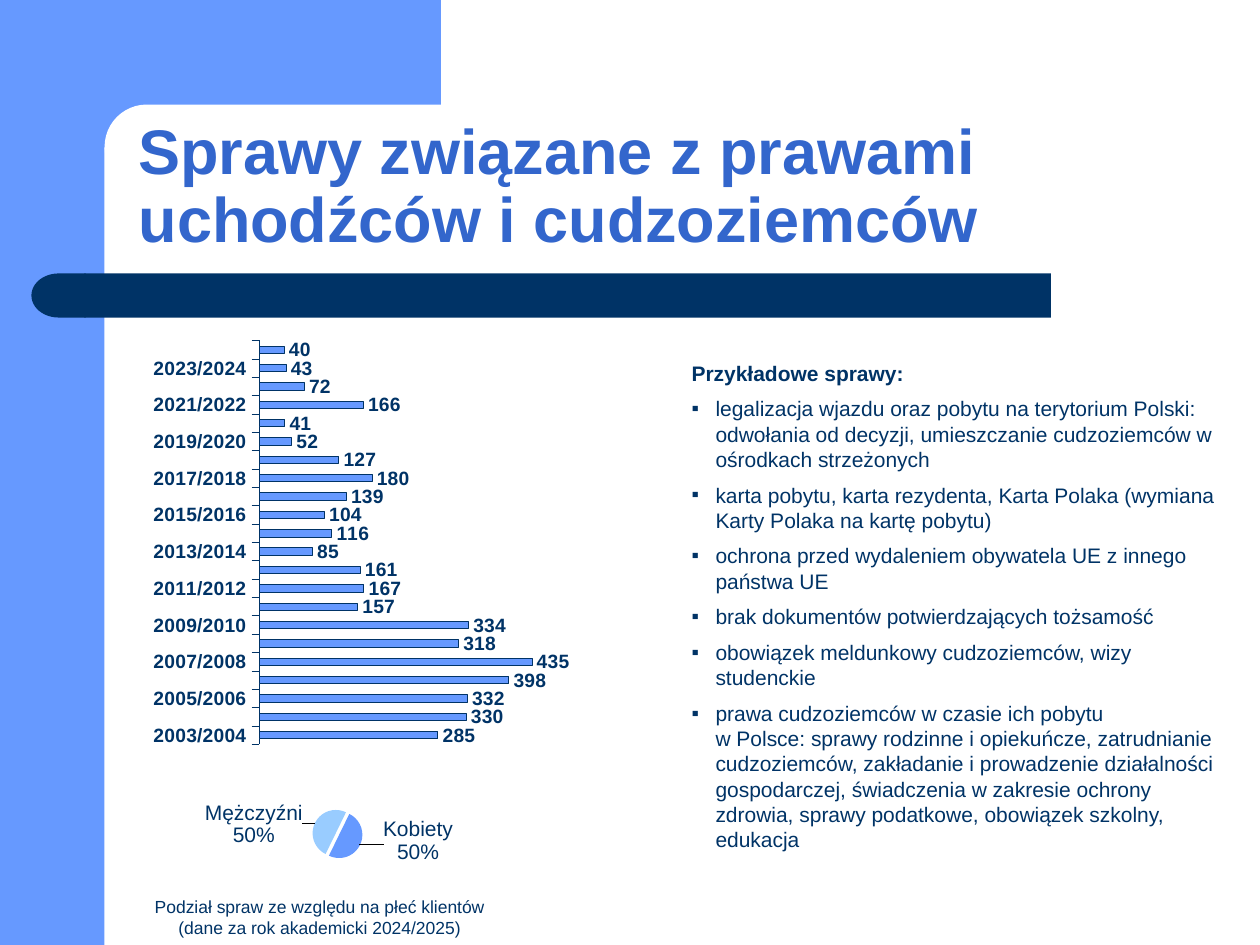
from lxml import etree
from pptx import Presentation, util as u
from pptx.chart.data import CategoryChartData
from pptx.dml.color import RGBColor
from pptx.enum import chart as charts, shapes, text
from pptx.oxml.ns import qn

CELL = u.Inches(0.1)
NAVY, BLUE, LIGHT, WHITE = "003366", "6699FF", "99CCFF", "FFFFFF"
YEAR_VALUES = [285, 330, 332, 398, 435, 318, 334, 157, 167, 161, 85,
               116, 104, 139, 180, 127, 52, 41, 166, 72, 43, 40]
YEARS = [f"{year}/{year + 1}" for year in range(2003, 2025)]
CASES = [
    "legalizacja wjazdu oraz pobytu na terytorium Polski: odwołania od decyzji, "
    "umieszczanie cudzoziemców w ośrodkach strzeżonych",
    "karta pobytu, karta rezydenta, Karta Polaka (wymiana Karty Polaka na kartę pobytu)",
    "ochrona przed wydaleniem obywatela UE z innego państwa UE",
    "brak dokumentów potwierdzających tożsamość",
    "obowiązek meldunkowy cudzoziemców, wizy studenckie",
    "prawa cudzoziemców w czasie ich pobytu \vw Polsce: sprawy rodzinne i opiekuńcze, "
    "zatrudnianie cudzoziemców, zakładanie i prowadzenie działalności gospodarczej, "
    "świadczenia w zakresie ochrony zdrowia, sprawy podatkowe, obowiązek szkolny, edukacja",
]


def color(value):
    return RGBColor.from_string(value)


def grid(*cells):
    return [int(cell * CELL) for cell in cells]


def apply(target, **values):
    for name, value in values.items():
        setattr(target, name, value)


def style(font, size, fill=NAVY, bold=False):
    apply(font, name="Arial", size=u.Pt(size), bold=bold)
    font.color.rgb = color(fill)


def add_block(slide, kind, cells, fill, adjustment=None, flipped=False):
    shape = slide.shapes.add_shape(kind, *grid(*cells))
    shape.shadow.inherit = False
    shape.fill.solid()
    shape.fill.fore_color.rgb = color(fill)
    shape.line.fill.background()
    if adjustment is not None:
        shape.adjustments[0] = adjustment
    if flipped:
        shape.element.spPr.xfrm.set("flipH", "1")


def add_title(slide, words, cells):
    title = slide.shapes.title
    apply(title, **dict(zip(("left", "top", "width", "height"), grid(*cells))))
    frame = title.text_frame
    frame.text = words
    apply(frame, vertical_anchor=text.MSO_ANCHOR.BOTTOM, word_wrap=True,
          auto_size=text.MSO_AUTO_SIZE.NONE)
    paragraph = frame.paragraphs[0]
    apply(paragraph, alignment=text.PP_ALIGN.LEFT, line_spacing=0.9)
    style(paragraph.runs[0].font, 36, "3366CC", True)
    slide.shapes._spTree.append(title.element)


def add_bullet(paragraph):
    properties = paragraph._p.get_or_add_pPr()
    indent = u.Inches(0.19)
    properties.set("marL", str(indent))
    properties.set("indent", str(-indent))
    etree.SubElement(properties, qn("a:buFont"), typeface="Arial")
    etree.SubElement(properties, qn("a:buChar"), char="▪")


def add_text(slide, cells, lines, size, alignment=text.PP_ALIGN.LEFT):
    frame = slide.shapes.add_textbox(*grid(*cells)).text_frame
    frame.word_wrap = True
    for index, (words, bold, bulleted) in enumerate(lines):
        paragraph = frame.add_paragraph() if index else frame.paragraphs[0]
        paragraph.text = words
        apply(paragraph, alignment=alignment, space_before=u.Pt(size / 2 if index else 0))
        if bulleted:
            add_bullet(paragraph)
        for run in paragraph.runs:
            style(run.font, size, bold=bold)
        for line_break in paragraph._p.findall(qn("a:br")):
            etree.SubElement(line_break, qn("a:rPr"), sz=str(size * 100))


def make_layout(**values):
    layout = etree.Element(qn("c:layout"))
    manual = etree.SubElement(layout, qn("c:manualLayout"))
    for name, value in values.items():
        etree.SubElement(manual, qn(f"c:{name}"), val=str(value))
    return layout


def add_chart(slide, kind, cells, categories, values, plot_box):
    data = CategoryChartData()
    data.categories = categories
    data.add_series("Series 1", values)
    chart = slide.shapes.add_chart(kind, *grid(*cells), data).chart
    apply(chart, has_title=False, has_legend=False)
    style(chart.font, 12)
    area = chart.element.xpath(".//c:plotArea")[0]
    for layout in area.findall(qn("c:layout")):
        area.remove(layout)
    area.insert(0, make_layout(layoutTarget="inner", xMode="edge", yMode="edge",
                               **dict(zip("xywh", plot_box))))
    return chart


def add_year_chart(slide):
    chart = add_chart(slide, charts.XL_CHART_TYPE.BAR_CLUSTERED, (8.3, 24.1, 43.3, 37.4),
                      YEARS, YEAR_VALUES, (0.283, 0.078, 0.575, 0.857))
    plot = chart.plots[0]
    apply(plot, gap_width=150, vary_by_categories=False)
    series = plot.series[0]
    series.format.fill.solid()
    series.format.fill.fore_color.rgb = color(BLUE)
    axis = chart.category_axis
    for line, width in ((series.format.line, 0.25), (axis.format.line, 0.15)):
        line.color.rgb = color(NAVY)
        line.width = u.Pt(width)
    apply(axis, major_tick_mark=charts.XL_TICK_MARK.OUTSIDE, has_major_gridlines=False)
    apply(chart.value_axis, minimum_scale=0, maximum_scale=500,
          has_major_gridlines=False, visible=False)
    labels = series.data_labels
    apply(labels, show_value=True, position=charts.XL_LABEL_POSITION.OUTSIDE_END)
    for font in (axis.tick_labels.font, labels.font):
        style(font, 11, bold=True)


def add_gender_chart(slide):
    chart = add_chart(slide, charts.XL_CHART_TYPE.PIE, (4.1, 60.3, 43.3, 11.8),
                      ["Kobiety", "Mężczyźni"], [50, 50], (0.478, 0.33, 0.092, 0.34))
    series = chart.plots[0].series[0]
    labels = series.data_labels
    apply(labels, show_value=False, show_percentage=True, show_category_name=True)
    style(labels.font, 12)
    for index, (fill, x, y) in enumerate(((BLUE, 0.03, -0.2), (LIGHT, -0.01, 0.18))):
        point = series.points[index]
        point.format.fill.solid()
        point.format.fill.fore_color.rgb = color(fill)
        style(point.data_label.font, 12)
        point.data_label.position = charts.XL_LABEL_POSITION.OUTSIDE_END
        label = chart.element.xpath(".//c:dLbl")[index]
        label.find(qn("c:idx")).addnext(make_layout(x=x, y=y))
        for name, value in (("showVal", "0"), ("showCatName", "1"), ("showPercent", "1")):
            label.find(qn(f"c:{name}")).set("val", value)
        etree.SubElement(label, qn("c:separator")).text = "\n"
    explosion = etree.Element(qn("c:explosion"), val="8")
    chart.element.xpath(".//c:dPt")[0].addprevious(explosion)
    pie = chart.element.xpath(".//c:pieChart")[0]
    for angle in pie.findall(qn("c:firstSliceAng")):
        pie.remove(angle)
    etree.SubElement(pie, qn("c:firstSliceAng"), val="26")


def main():
    presentation = Presentation()
    apply(presentation, slide_width=100 * CELL, slide_height=75 * CELL)
    slide = presentation.slides.add_slide(presentation.slide_layouts[5])
    kinds = shapes.MSO_SHAPE
    add_block(slide, kinds.RECTANGLE, (0, 0, 8.3, 75), BLUE)
    add_block(slide, kinds.RECTANGLE, (7.5, 0, 27.5, 11.7), BLUE)
    add_block(slide, kinds.ROUNDED_RECTANGLE, (8.3, 8.3, 55.8, 6.7), WHITE, 0.5)
    add_block(slide, kinds.ROUNDED_RECTANGLE, (6.7, 21.7, 76.7, 3.5), NAVY, 0)
    add_block(slide, kinds.FLOWCHART_DELAY, (2.5, 21.7, 4.3, 3.5), NAVY, flipped=True)
    add_title(slide, "Sprawy związane z prawami uchodźców i cudzoziemców",
              (10, 8.3, 87.5, 12.5))
    add_text(slide, (53.9, 28.1, 44.1, 41.4),
             [("Przykładowe sprawy:", True, False)] + [(case, False, True) for case in CASES], 12)
    add_year_chart(slide)
    add_gender_chart(slide)
    add_text(slide, (9.8, 70.6, 31.1, 4.4),
             [("Podział spraw ze względu na płeć klientów (dane za rok akademicki 2024/2025)",
               False, False)], 10, text.PP_ALIGN.CENTER)
    presentation.save("out.pptx")


if __name__ == "__main__":
    main()
